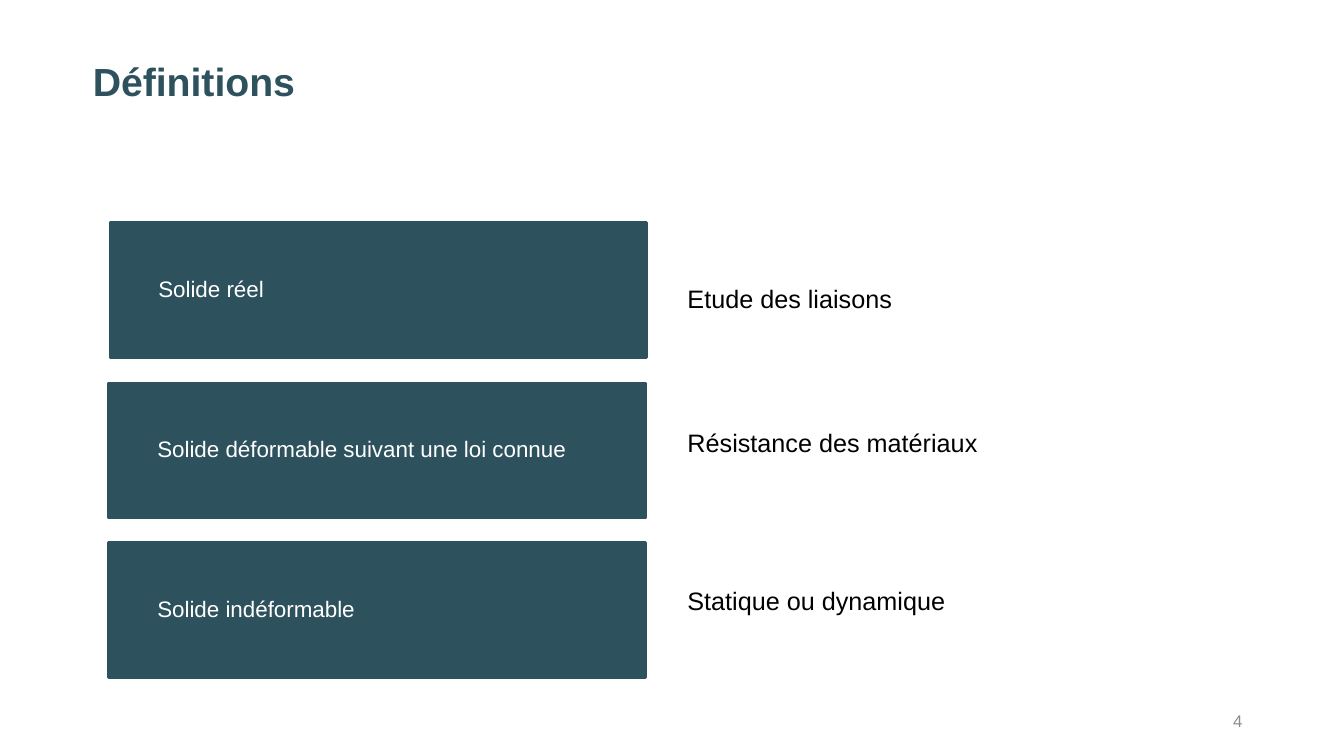
from pptx import Presentation
from pptx.dml.color import RGBColor
from pptx.enum.shapes import MSO_SHAPE as Shape
from pptx.enum.text import MSO_ANCHOR as Anchor, MSO_AUTO_SIZE as AutoSize, PP_ALIGN as Align
from pptx.util import Inches, Pt

TEAL = RGBColor(0x2E, 0x51, 0x5E)
WHITE = RGBColor(0xFF, 0xFF, 0xFF)
BLACK = RGBColor(0, 0, 0)
GREY = RGBColor(0x8C, 0x8C, 0x8C)

# Solid type, left and top of its box, field of study, top of the field
DEFINITIONS = [
    ("Solide réel", 1.09, 2.21, "Etude des liaisons", 2.76, 7.11),
    ("Solide déformable suivant une loi connue", 1.08, 3.8,
     "Résistance des matériaux", 4.19, 4.78),
    ("Solide indéformable", 1.08, 5.38, "Statique ou dynamique", 5.76, 5.47),
]


def write(shape, text, size, color, bold=False):
    """Set the shape's text in Arial and return its paragraph."""
    shape.text_frame.text = text
    shape.text_frame.word_wrap = True
    para = shape.text_frame.paragraphs[0]
    font = para.runs[0].font
    font.name, font.size, font.bold = "Arial", Pt(size), bold
    font.color.rgb = color
    return para


def add_text(slide, left, top, width, height):
    return slide.shapes.add_textbox(Inches(left), Inches(top), Inches(width), Inches(height))


def add_title(slide, text):
    box = add_text(slide, 0.92, 0.62, 11.52, 0.94)
    write(box, text, 28, TEAL, bold=True).line_spacing = 0.9
    frame = box.text_frame
    frame.margin_left = frame.margin_top = 0


def add_solid_box(slide, text, left, top):
    box = slide.shapes.add_shape(
        Shape.RECTANGLE, Inches(left), Inches(top), Inches(5.32), Inches(1.34))
    box.shadow.inherit = False
    box.fill.solid()
    box.fill.fore_color.rgb = TEAL
    box.line.color.rgb = TEAL
    box.line.width = Pt(2)
    para = write(box, text, 16, WHITE)
    para.alignment = Align.LEFT
    para.line_spacing = 0.9
    para.space_before = Pt(10)
    frame = box.text_frame
    frame.vertical_anchor = Anchor.MIDDLE
    frame.margin_left = frame.margin_right = Inches(0.48)


def add_field(slide, text, top, width):
    box = add_text(slide, 6.72, top, width, 0.4)
    write(box, text, 18, BLACK)
    box.text_frame.auto_size = AutoSize.SHAPE_TO_FIT_TEXT


def add_page_number(slide, number):
    box = add_text(slide, 9.42, 6.95, 3, 0.4)
    write(box, number, 12, GREY).alignment = Align.RIGHT
    box.text_frame.vertical_anchor = Anchor.MIDDLE


def main():
    deck = Presentation()
    deck.slide_width, deck.slide_height = Inches(13.33), Inches(7.5)
    slide = deck.slides.add_slide(deck.slide_layouts[6])
    add_title(slide, "Définitions")
    for solid, left, top, field, field_top, field_width in DEFINITIONS:
        add_solid_box(slide, solid, left, top)
        add_field(slide, field, field_top, field_width)
    add_page_number(slide, "4")
    deck.save("out.pptx")


if __name__ == "__main__":
    main()
